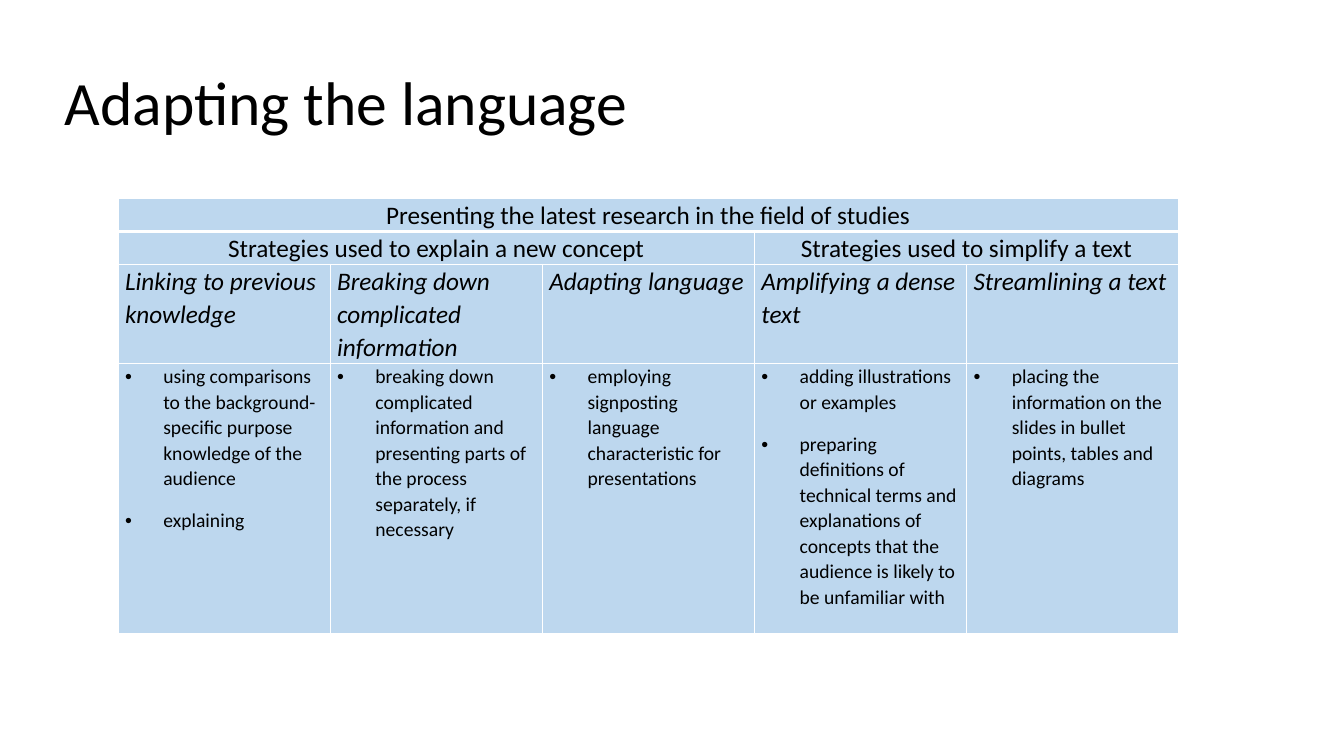
from lxml import etree
from pptx import Presentation
from pptx.dml.color import RGBColor
from pptx.enum.text import MSO_ANCHOR, MSO_AUTO_SIZE, PP_ALIGN
from pptx.oxml.ns import qn
from pptx.util import Inches, Pt

LEFT, CENTER = PP_ALIGN.LEFT, PP_ALIGN.CENTER
MIDDLE = MSO_ANCHOR.MIDDLE
NO_AUTOFIT = MSO_AUTO_SIZE.NONE

BLACK = RGBColor(0x00, 0x00, 0x00)
WHITE = RGBColor(0xFF, 0xFF, 0xFF)
PALE_BLUE = RGBColor(0xBD, 0xD7, 0xEE)
FONT = "Calibri"

TITLE_BOX = (0.54, 0.47, 12.27, 1.16)
TABLE_BOX = (1.17, 1.97, 10.52, 4.15)
ROW_HEIGHTS = (0.29, 0.29, 0.89, 2.68)

TOPIC = "Presenting the latest research in the field of studies"
# Strategy group -> techniques -> bullet points
STRATEGIES = {
    "Strategies used to explain a new concept": {
        "Linking to previous knowledge": [
            "using comparisons to the background-specific purpose knowledge of the audience",
            "explaining",
        ],
        "Breaking down complicated information": [
            "breaking down complicated information and presenting parts of the process "
            "separately, if necessary",
        ],
        "Adapting language": [
            "employing signposting language characteristic for presentations",
        ],
    },
    "Strategies used to simplify a text": {
        "Amplifying a dense text": [
            "adding illustrations or examples",
            "preparing definitions of technical terms and explanations of concepts that "
            "the audience is likely to be unfamiliar with",
        ],
        "Streamlining a text": [
            "placing the information on the slides in bullet points, tables and diagrams",
        ],
    },
}


def set_font(paragraph, size, italic=False):
    font = paragraph.font
    font.name, font.size, font.italic = FONT, Pt(size), italic
    font.color.rgb = BLACK


def add_title(slide, box):
    title = slide.shapes.title
    title.left, title.top, title.width, title.height = map(Inches, box)
    frame = title.text_frame
    frame.text = "Adapting the language"
    frame.auto_size = NO_AUTOFIT
    frame.vertical_anchor = MIDDLE
    heading = frame.paragraphs[0]
    heading.alignment = LEFT
    heading.line_spacing = 0.9
    set_font(heading, 44)


def style_cell(cell, top_width, bottom_width):
    """Give the cell white borders (widths in points), a fill and margins."""
    cell.margin_left = cell.margin_right = Inches(0.07)
    cell.margin_top = cell.margin_bottom = 0
    properties = cell._tc.get_or_add_tcPr()
    widths = {"a:lnL": 1, "a:lnR": 1, "a:lnT": top_width, "a:lnB": bottom_width}
    for side, width in widths.items():
        line = etree.SubElement(properties, qn(side), w=str(Pt(width)))
        line_fill = etree.SubElement(line, qn("a:solidFill"))
        etree.SubElement(line_fill, qn("a:srgbClr"), val=str(WHITE))
    cell.fill.solid()
    cell.fill.fore_color.rgb = PALE_BLUE


def add_bullet(paragraph):
    properties = paragraph._p.get_or_add_pPr()
    properties.set("marL", str(Inches(0.38)))
    properties.set("indent", str(-Inches(0.38)))
    etree.SubElement(properties, qn("a:buFont"), typeface="Arial")
    etree.SubElement(properties, qn("a:buChar"), char="•")


def write_heading(cell, text, alignment=CENTER, italic=False):
    cell.text = text
    heading = cell.text_frame.paragraphs[0]
    heading.alignment = alignment
    heading.line_spacing = 1.07
    heading.space_after = Pt(8)
    set_font(heading, 18, italic)


def write_bullets(cell, points):
    cell.text = "\n".join(points)
    for paragraph in cell.text_frame.paragraphs:
        add_bullet(paragraph)
        paragraph.line_spacing = 1.07
        paragraph.space_after = Pt(12)
        set_font(paragraph, 14)


def add_strategy_table(slide, box):
    column_count = sum(len(techniques) for techniques in STRATEGIES.values())
    left, top, width, height = map(Inches, box)
    table = slide.shapes.add_table(
        len(ROW_HEIGHTS), column_count, left, top, width, height).table
    for table_column in table.columns:
        table_column.width = int(width / column_count)
    for row_index, row_height in enumerate(ROW_HEIGHTS):
        table.rows[row_index].height = Inches(row_height)
        for cell in table.rows[row_index].cells:
            style_cell(cell, 3 if row_index == 1 else 1, 3 if row_index == 0 else 1)

    table.cell(0, 0).merge(table.cell(0, column_count - 1))
    write_heading(table.cell(0, 0), TOPIC)
    column = 0
    for group, techniques in STRATEGIES.items():
        group_cell = table.cell(1, column)
        group_cell.merge(table.cell(1, column + len(techniques) - 1))
        write_heading(group_cell, group)
        for technique, points in techniques.items():
            write_heading(table.cell(2, column), technique, LEFT, italic=True)
            write_bullets(table.cell(3, column), points)
            column += 1


def main():
    presentation = Presentation()
    presentation.slide_width = Inches(13.33)
    presentation.slide_height = Inches(7.5)
    slide = presentation.slides.add_slide(presentation.slide_layouts[5])
    add_title(slide, TITLE_BOX)
    add_strategy_table(slide, TABLE_BOX)
    presentation.save("out.pptx")


if __name__ == "__main__":
    main()
